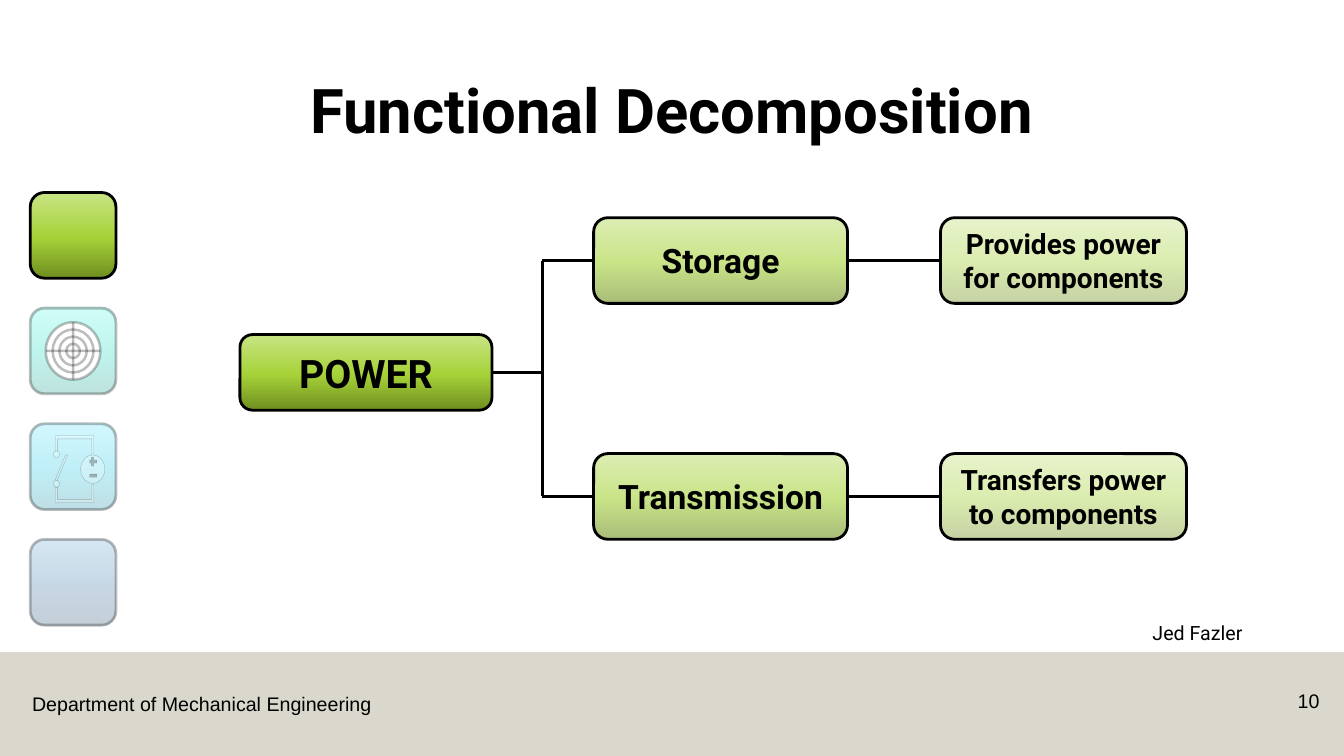
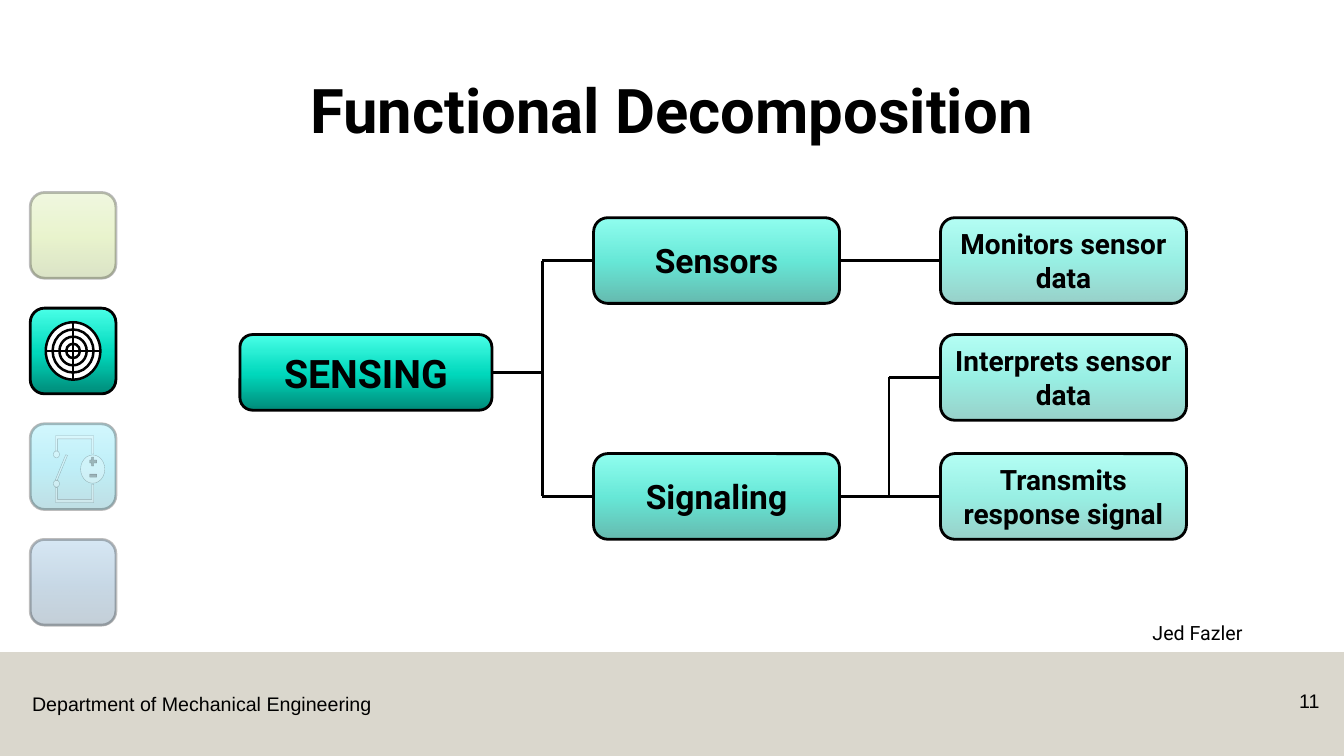
import pptx
import pptx.util
import pptx.dml.color
import pptx.enum.shapes
import pptx.enum.text
import pptx.oxml.ns
from dataclasses import dataclass
from lxml import etree


# Theme: colours, fonts and type sizes
@dataclass(frozen=True)
class Theme:
    ink: str = "000000"
    paper: str = "FFFFFF"
    band: str = "B7B09C"
    face: str = "Roboto"
    plain: str = "Arial"
    title: int = 44
    root: int = 28
    branch: int = 24
    leaf: int = 20
    small: int = 14
    line: float = 2
    ring: float = 1.78
    hair: float = 0.25
    faint: int = 25


THEME = Theme()
STOPS = (0, 48, 100)
HUES = {
    "power": ("6F8F20", "A7D339", "C8E485"),
    "sensing": ("008B79", "00D8BC", "49FFE7"),
    "circuit": ("007D93", "00C2E5", "51E5FF"),
    "other": ("174162", "25669A", "60A3D9"),
}

# Content: each branch has a row and its leaves, each leaf has a row
TITLE = "Functional Decomposition"
AUTHOR = "Jed Fazler"
UNIT = "Department of Mechanical Engineering"
PAGES = [
    dict(number="10", hue="power", root="POWER", wide=181.4, tree=[
        ("Storage", 0, [("Provides power for components", 0)]),
        ("Transmission", 2, [("Transfers power to components", 2)]),
    ]),
    dict(number="11", hue="sensing", root="SENSING", wide=175.7, tree=[
        ("Sensors", 0, [("Monitors sensor data", 0)]),
        ("Signaling", 2, [("Interprets sensor data", 1),
                          ("Transmits response signal", 2)]),
    ]),
]

# Layout in points
WIDE, HIGH = 960, 540
BAND = (0, 465.8, WIDE, 74.2)
UNIT_BOX = (15.8, 491, 258.5, 24.5)
TITLE_BOX = (66, 28.8, 828, 104.4)
AUTHOR_BOX = (816, 442.1, 144, 24.5)
NUMBER_BOX = (894.2, 488.9, 55.4, 28.8)
ROOT_BOX = (171.4, 239, 180, 54)
ROWS = (155.5, 239, 324)
BOX_H, LEAF_W = 61.2, 175.7
BRANCH_X, LEAF_X = 424, 671.8
TRUNK_X, FORK_X = 387.4, 635
TILE, TILE_X, TILE_Y, TILE_STEP = 61.2, 21.6, 137.5, 82.6
RING_W, RING_H, RINGS = 39, 41, 4

KIND = pptx.enum.shapes.MSO_SHAPE
ALIGN = pptx.enum.text.PP_ALIGN
MIDDLE = pptx.enum.text.MSO_ANCHOR.MIDDLE
qn = pptx.oxml.ns.qn


def points(values):
    return [pptx.util.Pt(v) for v in values]


def tint(code):
    return pptx.dml.color.RGBColor.from_string(code)


def fade(node, share):
    """Give every colour below the node an opacity in percent."""
    if share < 100:
        for color in node.iter(qn("a:srgbClr")):
            etree.SubElement(color, qn("a:alpha"), val=str(share * 1000))


def outline(shape, weight, share=100):
    shape.line.color.rgb = tint(THEME.ink)
    shape.line.width = pptx.util.Pt(weight)
    fade(shape.element.spPr.find(qn("a:ln")), share)


def flat(shape, color, weight=0, share=100, edge=100):
    shape.shadow.inherit = False
    shape.fill.solid()
    shape.fill.fore_color.rgb = tint(color)
    fade(shape.element.spPr.find(qn("a:solidFill")), share)
    if weight:
        outline(shape, weight, edge)
    else:
        shape.line.fill.background()


def write(frame, text, size, face, bold=False, align=ALIGN.LEFT):
    frame.text = text
    para = frame.paragraphs[0]
    para.alignment = align
    para.font.size = pptx.util.Pt(size)
    para.font.name = face
    para.font.bold = bold
    para.font.color.rgb = tint(THEME.ink)
    return para


def label(shapes, box, text, align=ALIGN.LEFT, wrap=True):
    shape = shapes.add_textbox(*points(box))
    shape.text_frame.word_wrap = wrap
    write(shape.text_frame, text, THEME.small, THEME.plain, align=align)
    return shape


def panel(shapes, box, hue, share=100, edge=100):
    """Rounded box with the upward gradient of a hue."""
    shape = shapes.add_shape(KIND.ROUNDED_RECTANGLE, *points(box))
    shape.shadow.inherit = False
    shape.fill.gradient()
    shape.fill.gradient_angle = 90
    stops = shape.element.spPr.find(qn("a:gradFill")).find(qn("a:gsLst"))
    for old in list(stops):
        stops.remove(old)
    for place, code in zip(STOPS, HUES[hue]):
        stop = etree.SubElement(stops, qn("a:gs"), pos=str(place * 1000))
        etree.SubElement(stop, qn("a:srgbClr"), val=code)
    fade(stops, share)
    outline(shape, THEME.line, edge)
    return shape


def node(shapes, box, hue, share, text, size):
    shape = panel(shapes, box, hue, share)
    shape.text_frame.word_wrap = True
    shape.text_frame.vertical_anchor = MIDDLE
    write(shape.text_frame, text, size, THEME.face, True, ALIGN.CENTER)
    return shape


def link(shapes, start, end, first=None, last=None,
         weight=THEME.line, share=100):
    """Straight line, joined to the right of first and the left of last."""
    wire = shapes.add_connector(pptx.enum.shapes.MSO_CONNECTOR.STRAIGHT,
                                *points(start + end))
    if first is not None:
        wire.begin_connect(first, 3)
    if last is not None:
        wire.end_connect(last, 1)
    outline(wire, weight, share)
    etree.SubElement(wire.element.spPr, qn("a:effectLst"))


# Tree of boxes
def draw_tree(shapes, page):
    hue, wide = page["hue"], page["wide"]
    root = node(shapes, ROOT_BOX, hue, 100, page["root"], THEME.root)
    left, top, width, height = ROOT_BOX
    mid = top + height / 2
    link(shapes, (left + width, mid), (TRUNK_X, mid), first=root)
    level = [row + BOX_H / 2 for row in ROWS]
    rows = [row for _, row, _ in page["tree"]]
    link(shapes, (TRUNK_X, level[rows[0]]), (TRUNK_X, level[rows[-1]]))
    for name, row, leaves in page["tree"]:
        y = level[row]
        branch = node(shapes, (BRANCH_X, ROWS[row], wide, BOX_H), hue, 60,
                      name, THEME.branch)
        link(shapes, (TRUNK_X, y), (BRANCH_X, y), last=branch)
        for text, spot in leaves:
            leaf = node(shapes, (LEAF_X, ROWS[spot], LEAF_W, BOX_H), hue, 40,
                        text, THEME.leaf)
            if spot == row:
                link(shapes, (BRANCH_X + wide, y), (LEAF_X, y), branch, leaf)
            else:
                link(shapes, (FORK_X, level[spot]), (LEAF_X, level[spot]),
                     last=leaf)
                link(shapes, (FORK_X, level[spot]), (FORK_X, y))


# Icons in the side column
def draw_target(shapes, x, y, share):
    cx, cy = x + TILE / 2, y + TILE / 2
    for step in range(RINGS, 0, -1):
        w, h = RING_W * step / RINGS, RING_H * step / RINGS
        ring = shapes.add_shape(
            KIND.OVAL, *points((cx - w / 2, cy - h / 2, w, h)))
        flat(ring, THEME.paper, THEME.ring, edge=share)
    for dx, dy in ((0, RING_H / 2), (RING_W / 2, 0)):
        link(shapes, (cx - dx, cy - dy), (cx + dx, cy + dy),
             weight=THEME.ring, share=share)


PARTS = [  # kind, box inside the tile, colour, turn
    (KIND.OVAL, (16.6, 19.4, 4.3, 5), THEME.paper, 0),
    (KIND.OVAL, (16.6, 40.3, 4.3, 5), THEME.paper, 0),
    (KIND.OVAL, (36, 22.3, 17.3, 20.2), THEME.paper, 0),
    (KIND.RECTANGLE, (42.5, 36, 5, 2.2), THEME.ink, 0),
    (KIND.RECTANGLE, (21.6, 21.6, 1.4, 19.4), THEME.paper, 22.4),
]
PLUS = [(43.9, 23.8), (45.4, 23.8), (45.4, 25.9), (47.5, 25.9),
        (47.5, 28.1), (45.4, 28.1), (45.4, 30.2), (43.9, 30.2),
        (43.9, 28.1), (42.5, 28.1), (42.5, 25.9), (43.9, 25.9)]
WIRE = [(18, 8.6), (45.4, 8.6), (45.4, 21.6), (43.9, 21.6),
        (43.9, 10.8), (19.4, 10.8), (19.4, 19.4), (18, 19.4)]
FLIP = [(x, 64.8 - y) for x, y in WIRE]


def draw_circuit(shapes, x, y, share):
    for kind, (dx, dy, w, h), color, turn in PARTS:
        part = shapes.add_shape(kind, *points((x + dx, y + dy, w, h)))
        part.rotation = turn
        flat(part, color, THEME.hair, share, share)
    for path, color in ((PLUS, THEME.ink), (WIRE, THEME.paper),
                        (FLIP, THEME.paper)):
        spots = [points((x + dx, y + dy)) for dx, dy in path]
        pen = shapes.build_freeform(*spots[0])
        pen.add_line_segments(spots[1:], close=True)
        flat(pen.convert_to_shape(), color, THEME.hair, share, share)


GLYPHS = {"sensing": draw_target, "circuit": draw_circuit}


def draw_icons(shapes, active):
    for i, hue in enumerate(HUES):
        y = TILE_Y + i * TILE_STEP
        share = 100 if hue == active else THEME.faint
        area = shapes.add_group_shape().shapes if hue in GLYPHS else shapes
        panel(area, (TILE_X, y, TILE, TILE), hue, share, share)
        if hue in GLYPHS:
            GLYPHS[hue](area, TILE_X, y, share)


# Shared layout: placeholder places, band and footer
def set_places(layout):
    for holder in list(layout.placeholders):
        spot = {0: TITLE_BOX, 1: AUTHOR_BOX}.get(
            holder.placeholder_format.idx)
        if spot is None:
            holder.element.getparent().remove(holder.element)
        else:
            (holder.left, holder.top,
             holder.width, holder.height) = points(spot)


def set_footer(slide, layout):
    band = slide.shapes.add_shape(KIND.RECTANGLE, *points(BAND))
    flat(band, THEME.band, share=50)
    unit = label(slide.shapes, UNIT_BOX, UNIT, wrap=False)
    for shape in (band, unit):
        layout.shapes.element.append(shape.element)


def fill_holders(slide):
    title, author = slide.shapes.title, slide.placeholders[1]
    title.text_frame.vertical_anchor = MIDDLE
    head = write(title.text_frame, TITLE, THEME.title, THEME.face, True,
                 ALIGN.CENTER)
    author.text_frame.text = AUTHOR
    props = author.text_frame.paragraphs[0]._p.get_or_add_pPr()
    props.set("marL", "0")
    props.set("indent", "0")
    etree.SubElement(props, qn("a:buNone"))
    line = author.text_frame.paragraphs[0]
    line.font.size = pptx.util.Pt(THEME.small)
    line.font.name = THEME.face
    line.font.color.rgb = tint(THEME.ink)
    for holder, para in ((title, head), (author, line)):
        holder.text_frame.auto_size = pptx.enum.text.MSO_AUTO_SIZE.NONE
        para.line_spacing = 0.9
        para.space_before = pptx.util.Pt(0)


def main():
    deck = pptx.Presentation()
    deck.slide_width, deck.slide_height = points((WIDE, HIGH))
    layout = deck.slide_layouts[1]
    set_places(layout)
    for i, page in enumerate(PAGES):
        slide = deck.slides.add_slide(layout)
        if i == 0:
            set_footer(slide, layout)
        fill_holders(slide)
        draw_tree(slide.shapes, page)
        draw_icons(slide.shapes, page["hue"])
        label(slide.shapes, NUMBER_BOX, page["number"], ALIGN.RIGHT)
    deck.save("out.pptx")


if __name__ == "__main__":
    main()
